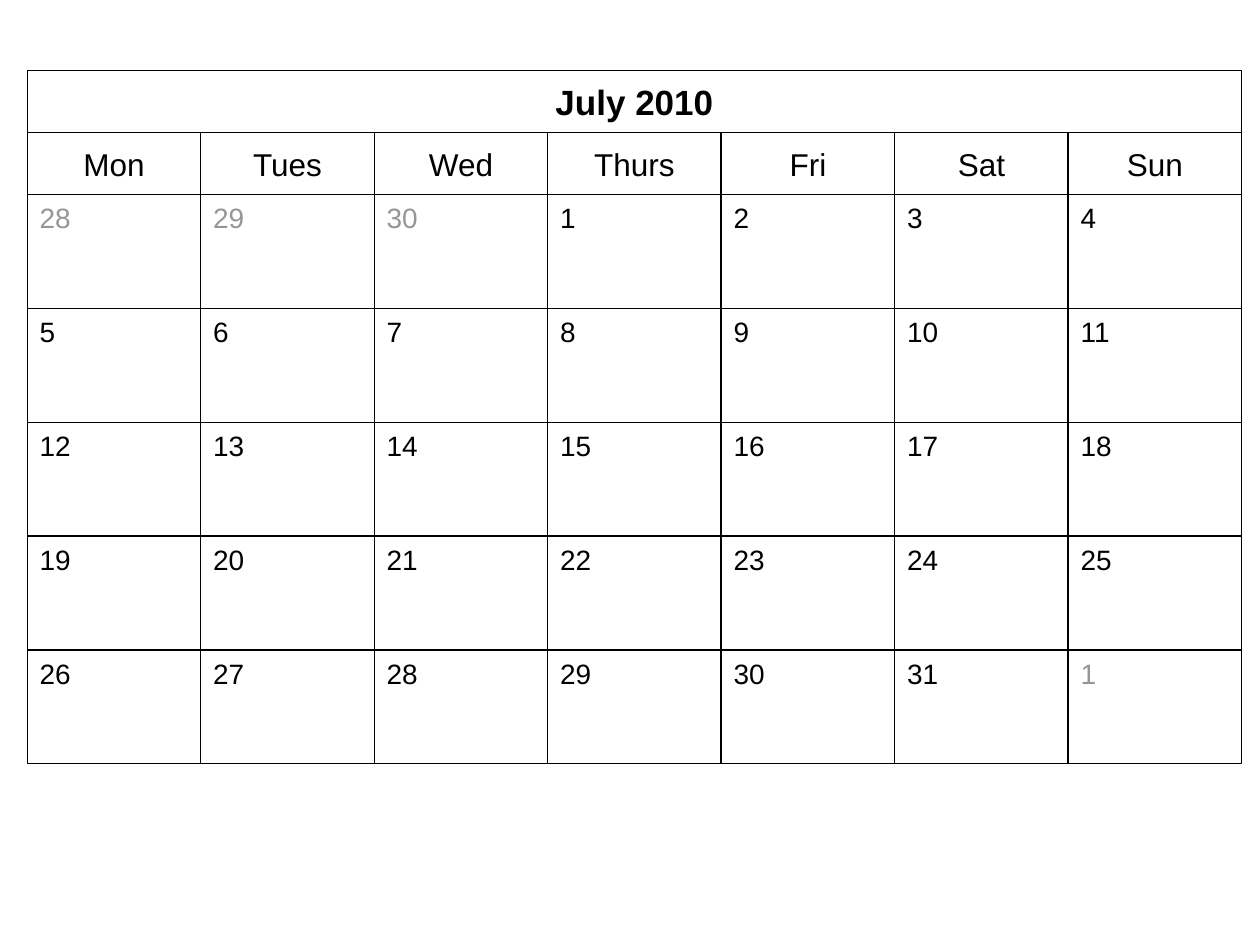
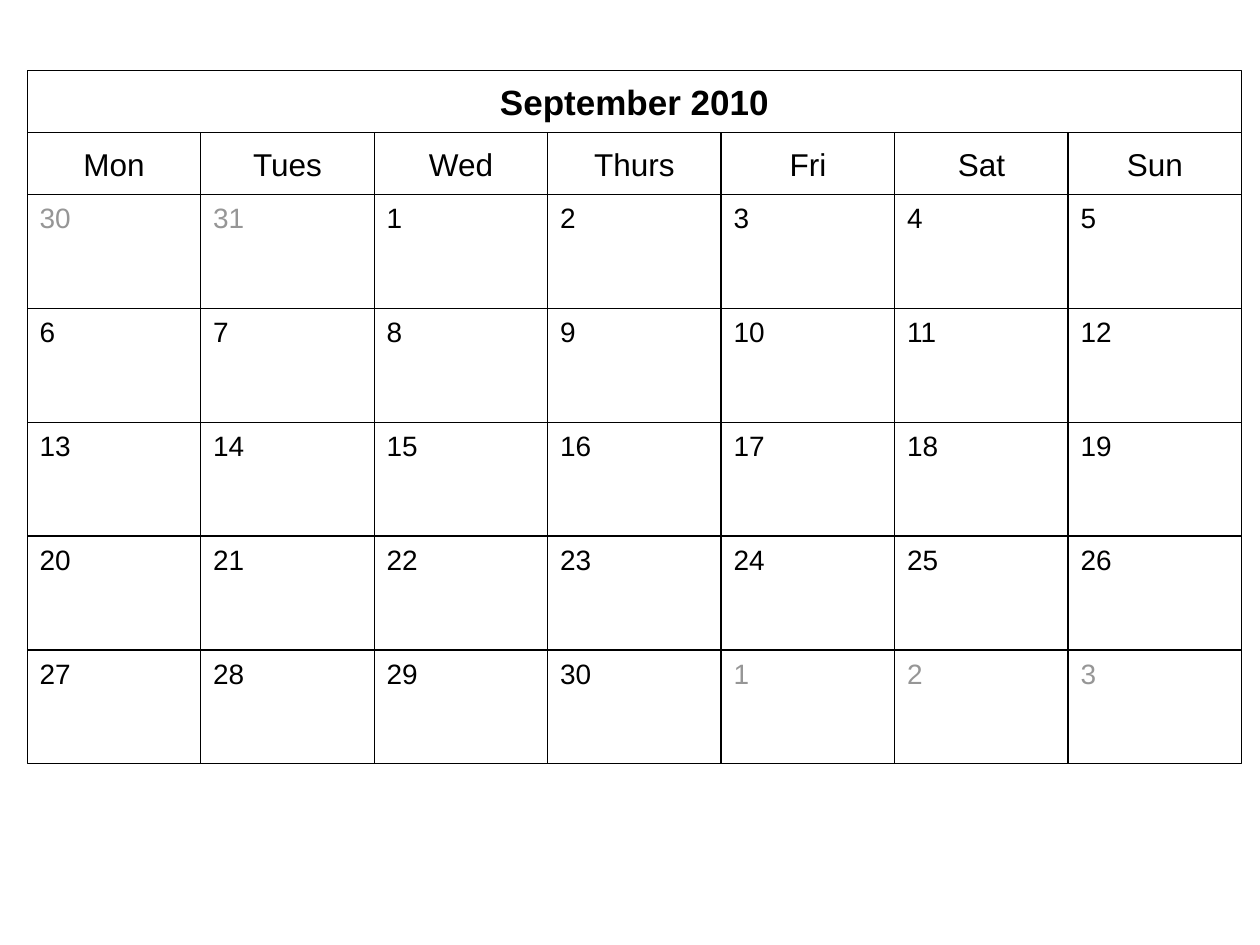
import pptx
import pptx.util
import pptx.dml.color
import pptx.enum.shapes
import pptx.enum.text

Cm = pptx.util.Cm
Pt = pptx.util.Pt
RGB = pptx.dml.color.RGBColor
ALIGN = pptx.enum.text.PP_ALIGN
ANCHOR = pptx.enum.text.MSO_ANCHOR

theme = {
    "font": "Arial",
    "ink": RGB(0, 0, 0),
    "faded": RGB(0x96, 0x96, 0x96),
    "paper": RGB(255, 255, 255),
    "line": Pt(0.75),
    "title": Pt(20),
    "head": Pt(18),
    "day": Pt(16),
}

left, top = 0.55, 1.42
width, band = 24.48, 1.25
weeks, depth = 5, 11.48
names = ["Mon", "Tues", "Wed", "Thurs", "Fri", "Sat", "Sun"]
col = width / len(names)
row = depth / weeks
grid = top + 2 * band

months = [
    {"title": "July 2010", "before": 3, "prior": 30, "length": 31},
    {"title": "September 2010", "before": 2, "prior": 31, "length": 30},
]


def style(box, text, size, color, bold=False, head=True):
    box.line.color.rgb = theme["ink"]
    box.line.width = theme["line"]
    frame = box.text_frame
    frame.text = text
    frame.word_wrap = True
    frame.auto_size = pptx.enum.text.MSO_AUTO_SIZE.NONE
    frame.margin_left = frame.margin_right = Cm(0.25)
    frame.margin_top = frame.margin_bottom = Cm(0.05 if head else 0.13)
    frame.vertical_anchor = ANCHOR.MIDDLE if head else ANCHOR.TOP
    if head:
        box.fill.solid()
        box.fill.fore_color.rgb = theme["paper"]
    else:
        box.fill.background()
    para = frame.paragraphs[0]
    para.alignment = ALIGN.CENTER if head else ALIGN.LEFT
    font = para.runs[0].font
    font.name = theme["font"]
    font.size = size
    font.bold = bold
    font.color.rgb = color


def cell(slide, x, y, height):
    box = slide.shapes.add_shape(
        pptx.enum.shapes.MSO_SHAPE.RECTANGLE, Cm(x), Cm(y), Cm(col), Cm(height)
    )
    box.shadow.inherit = False
    return box


deck = pptx.Presentation()
deck.slide_width = Cm(25.4)
deck.slide_height = Cm(19.05)

for month in months:
    slide = deck.slides.add_slide(deck.slide_layouts[5])
    title = slide.shapes.title
    title.left, title.top = Cm(left), Cm(top)
    title.width, title.height = Cm(width), Cm(band)
    style(title, month["title"], theme["title"], theme["ink"], bold=True)

    for i, name in enumerate(names):
        box = cell(slide, left + i * col, top + band, band)
        style(box, name, theme["head"], theme["ink"])

    for i in range(weeks * len(names)):
        week, day = divmod(i, len(names))
        date = i + 1 - month["before"]
        inside = 1 <= date <= month["length"]
        if date < 1:
            date += month["prior"]
        elif not inside:
            date -= month["length"]
        box = cell(slide, left + day * col, grid + week * row, row)
        color = theme["ink"] if inside else theme["faded"]
        style(box, str(date), theme["day"], color, head=False)

deck.save("out.pptx")
